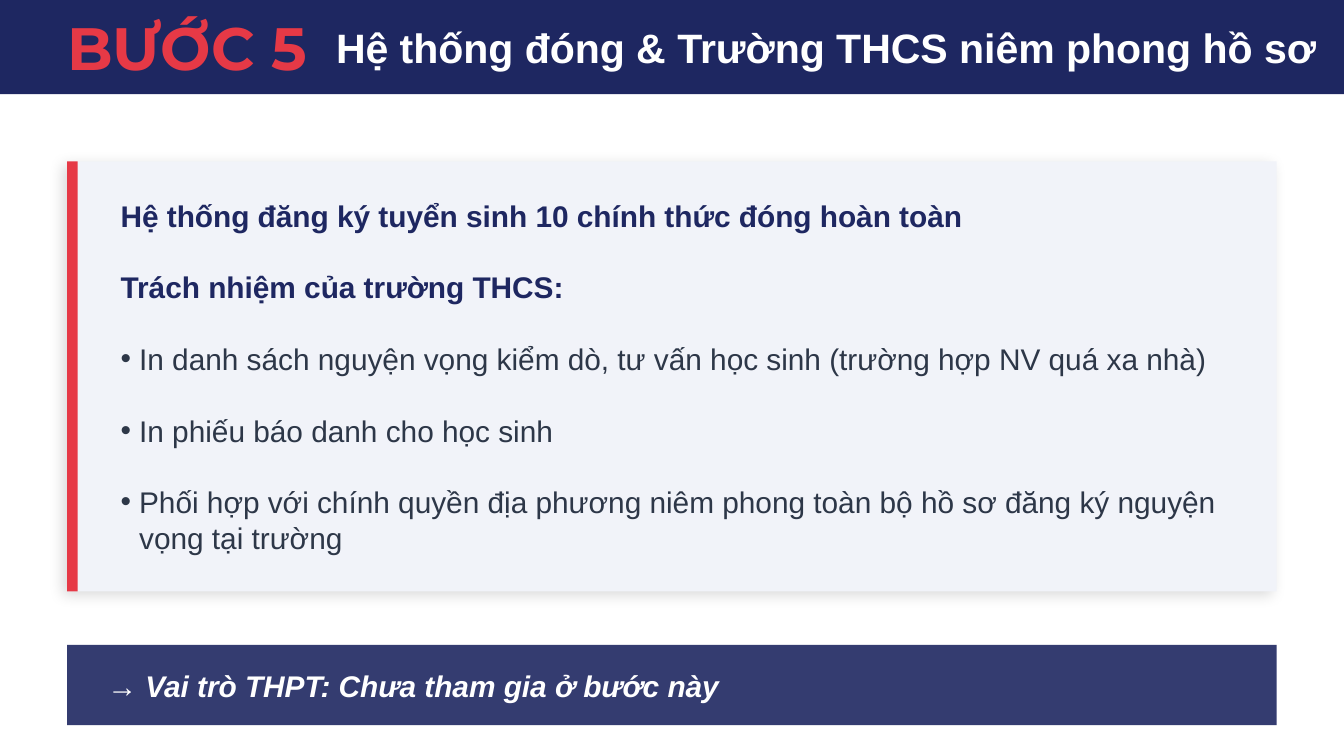
from lxml.etree import SubElement
from pptx import Presentation
from pptx.dml.color import RGBColor
from pptx.enum.shapes import MSO_SHAPE
from pptx.enum.text import MSO_ANCHOR, MSO_AUTO_SIZE, PP_ALIGN
from pptx.oxml.ns import qn
from pptx.util import Cm, Pt

COLORS = {
    "navy": "1E2761",
    "red": "E63946",
    "pale": "F1F3F9",
    "ink": "2D3748",
    "white": "FFFFFF",
    "black": "000000",
}
HANG = Cm(0.35)


def place(shape, box):
    shape.left, shape.top, shape.width, shape.height = map(Cm, box)
    return shape


def add_bar(slide, box, color, alpha=None):
    bar = slide.shapes.add_shape(MSO_SHAPE.RECTANGLE, *map(Cm, box))
    bar.shadow.inherit = False
    bar.fill.solid()
    bar.fill.fore_color.rgb = RGBColor.from_string(COLORS[color])
    bar.line.fill.background()
    if alpha:
        tint = bar.fill._xPr.find(qn("a:solidFill")).find(qn("a:srgbClr"))
        SubElement(tint, qn("a:alpha"), val=str(alpha * 1000))
    return bar


def add_soft_shadow(bar):
    effects = bar._element.spPr.find(qn("a:effectLst"))
    shadow = SubElement(effects, qn("a:outerShdw"), blurRad=str(Pt(8)),
                        dist=str(Pt(3)), dir=str(135 * 60000),
                        algn="bl", rotWithShape="0")
    tint = SubElement(shadow, qn("a:srgbClr"), val=COLORS["black"])
    SubElement(tint, qn("a:alpha"), val="15000")


def prepare_frame(shape, margin=0):
    frame = shape.text_frame
    frame.word_wrap = True
    frame.auto_size = MSO_AUTO_SIZE.NONE
    frame.vertical_anchor = MSO_ANCHOR.MIDDLE
    frame.margin_left = frame.margin_right = Cm(margin)
    frame.margin_top = frame.margin_bottom = Cm(margin / 2)
    return frame


def write(paragraph, text, size=16, color="white", font="Arial", bold=True,
          italic=False, bullet=False, before=0, leading=None):
    paragraph.alignment = PP_ALIGN.LEFT
    paragraph.space_before = Pt(before)
    paragraph.space_after = Pt(0)
    paragraph.line_spacing = Pt(leading) if leading else 1.0
    props = paragraph._p.get_or_add_pPr()
    props.set("marL", str(HANG if bullet else 0))
    props.set("indent", str(-HANG if bullet else 0))
    if bullet:
        SubElement(props, qn("a:buChar"), char="•")
    else:
        SubElement(props, qn("a:buNone"))
    run = paragraph.add_run()
    run.text = text
    for style in (paragraph.font, run.font):
        style.name = font
        style.size = Pt(size)
        style.bold = bold
        style.italic = italic
        style.color.rgb = RGBColor.from_string(COLORS[color])


def bring_forward(slide, shape):
    slide.shapes._spTree.append(shape._element)


def build_header(slide, box, step, heading):
    left, top, width, height = box
    add_bar(slide, box, "navy")
    badge = slide.shapes.add_textbox(
        *map(Cm, (left + 1.27, top + 0.25, 5.08, height - 0.51)))
    write(prepare_frame(badge).paragraphs[0], step,
          size=32, color="red", font="Montserrat")
    title = place(slide.shapes.title,
                  (left + 6.35, top + 0.38, 19.46, height - 0.76))
    write(prepare_frame(title).paragraphs[0], heading, size=22)
    bring_forward(slide, title)


def build_duties(slide, box, headings, duties):
    left, top, width, height = box
    add_soft_shadow(add_bar(slide, box, "pale"))
    add_bar(slide, (left, top, 0.2, height), "red")
    body = place(slide.placeholders[1],
                 (left + 0.76, top + 0.51, width - 1.52, height - 1.02))
    frame = prepare_frame(body, margin=0.25)
    lines = [(text, False) for text in headings] + [(text, True) for text in duties]
    for index, (text, is_duty) in enumerate(lines):
        paragraph = frame.add_paragraph() if index else frame.paragraphs[0]
        write(paragraph, text, color="ink" if is_duty else "navy",
              bold=not is_duty, bullet=is_duty,
              before=19.2 if index else 0, leading=19.2)
    bring_forward(slide, body)


def build_role(slide, box, role):
    left, top, width, height = box
    add_bar(slide, box, "navy", alpha=90)
    note = slide.shapes.add_textbox(
        *map(Cm, (left + 0.51, top + 0.25, width - 1.02, height - 0.5)))
    write(prepare_frame(note, margin=0.25).paragraphs[0], role, italic=True)


def main():
    deck = Presentation()
    deck.slide_width, deck.slide_height = Cm(25.4), Cm(14.29)
    slide = deck.slides.add_slide(deck.slide_layouts[1])
    build_header(slide, (0, 0, 25.4, 1.78), "BƯỚC 5",
                 "Hệ thống đóng & Trường THCS niêm phong hồ sơ")
    build_duties(
        slide, (1.27, 3.05, 22.86, 8.13),
        ["Hệ thống đăng ký tuyển sinh 10 chính thức đóng hoàn toàn",
         "Trách nhiệm của trường THCS:"],
        ["In danh sách nguyện vọng kiểm dò, tư vấn học sinh (trường hợp NV quá xa nhà)",
         "In phiếu báo danh cho học sinh",
         "Phối hợp với chính quyền địa phương niêm phong toàn bộ hồ sơ "
         "đăng ký nguyện vọng tại trường"])
    build_role(slide, (1.27, 12.19, 22.86, 1.52),
               "→ Vai trò THPT: Chưa tham gia ở bước này")
    deck.save("out.pptx")


if __name__ == "__main__":
    main()
